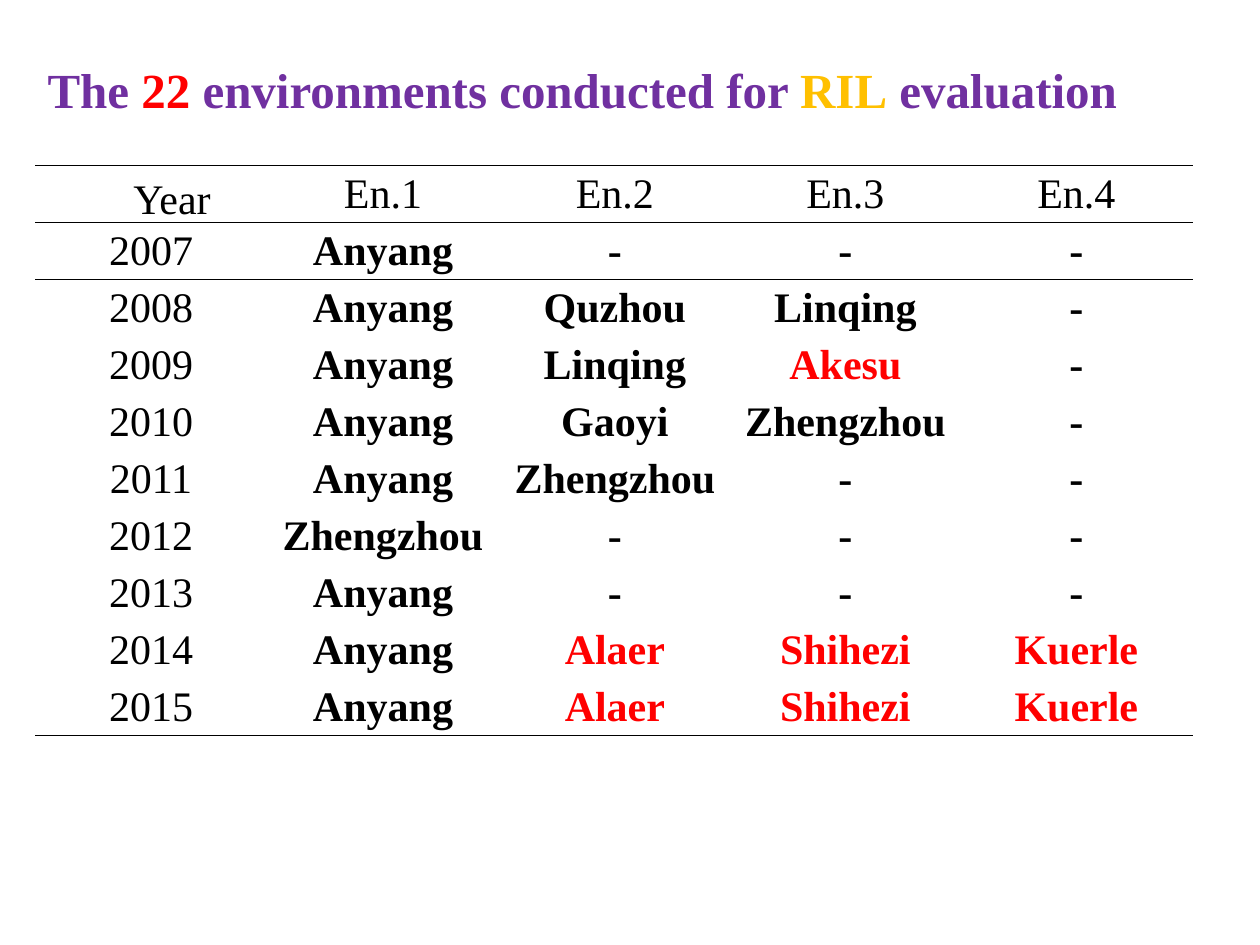
from lxml import etree
from pptx import Presentation
from pptx.dml.color import RGBColor
from pptx.enum.text import MSO_ANCHOR, MSO_AUTO_SIZE, PP_ALIGN
from pptx.oxml.ns import qn
from pptx.util import Pt

PX = 914400 // 126
CENTER, LEFT = PP_ALIGN.CENTER, PP_ALIGN.LEFT
MIDDLE, TOP = MSO_ANCHOR.MIDDLE, MSO_ANCHOR.TOP
FIT_SHAPE = MSO_AUTO_SIZE.SHAPE_TO_FIT_TEXT
BLACK = RGBColor(0x00, 0x00, 0x00)
RED = RGBColor(0xFF, 0x00, 0x00)
PURPLE = RGBColor(0x70, 0x30, 0xA0)
GOLD = RGBColor(0xFF, 0xC0, 0x00)
FONT = "Times New Roman"
NO_STYLE = "{2D5ABB26-0587-4C30-8999-92F81FD0307C}"

TITLE = [("The ", PURPLE), ("22", RED), (" environments conducted for ", PURPLE),
         ("RIL", GOLD), (" evaluation", PURPLE)]
ROWS = [
    ["　Year", "En.1", "En.2", "En.3", "En.4"],
    ["2007", "Anyang", "-", "-", "-"],
    ["2008", "Anyang", "Quzhou", "Linqing", "-"],
    ["2009", "Anyang", "Linqing", "Akesu", "-"],
    ["2010", "Anyang", "Gaoyi", "Zhengzhou", "-"],
    ["2011", "Anyang", "Zhengzhou", "-", "-"],
    ["2012", "Zhengzhou", "-", "-", "-"],
    ["2013", "Anyang", "-", "-", "-"],
    ["2014", "Anyang", "Alaer", "Shihezi", "Kuerle"],
    ["2015", "Anyang", "Alaer", "Shihezi", "Kuerle"],
]
RED_PLACES = {"Akesu", "Alaer", "Shihezi", "Kuerle"}
COL_WIDTHS = [232, 232, 232, 229, 233]
ROW_HEIGHT = 57


def add_run(p, text, size, color, bold):
    r = p.add_run()
    r.text = text
    r.font.name = FONT
    r.font.size = Pt(size)
    r.font.bold = bold
    r.font.color.rgb = color


def add_border(cell, side):
    """Rule one edge of a cell; side is lnT or lnB, added in that order."""
    ln = etree.SubElement(cell._tc.get_or_add_tcPr(), qn("a:" + side), w=str(Pt(0.5)))
    fill = etree.SubElement(ln, qn("a:solidFill"))
    etree.SubElement(fill, qn("a:srgbClr"), val=str(BLACK))


prs = Presentation()
prs.slide_width, prs.slide_height = 1260 * PX, 945 * PX
s = prs.slides.add_slide(prs.slide_layouts[5])

title = s.shapes.title
title.left, title.top, title.width, title.height = 35 * PX, 53 * PX, 1171 * PX, 72 * PX
tf = title.text_frame
tf.word_wrap = True
tf.auto_size = FIT_SHAPE
tf.vertical_anchor = TOP
p = tf.paragraphs[0]
p.alignment = LEFT
for text, color in TITLE:
    add_run(p, text, 28, color, True)

table = s.shapes.add_table(len(ROWS), len(COL_WIDTHS), 35 * PX, 165 * PX,
                           sum(COL_WIDTHS) * PX, len(ROWS) * ROW_HEIGHT * PX).table
table.first_row = table.horz_banding = False
table._tbl.tblPr.find(qn("a:tableStyleId")).text = NO_STYLE
for column, width in zip(table.columns, COL_WIDTHS):
    column.width = width * PX

for i, row in enumerate(ROWS):
    table.rows[i].height = ROW_HEIGHT * PX
    for j, text in enumerate(row):
        cell = table.cell(i, j)
        cell.margin_left = cell.margin_right = cell.margin_top = PX
        cell.margin_bottom = 0
        cell.vertical_anchor = MIDDLE
        if i in (0, 1):
            add_border(cell, "lnT")
        if i in (0, len(ROWS) - 1):
            add_border(cell, "lnB")
        cell.fill.background()
        p = cell.text_frame.paragraphs[0]
        p.alignment = CENTER
        add_run(p, text, 24, RED if text in RED_PLACES else BLACK, i > 0 and j > 0)

prs.save("out.pptx")
